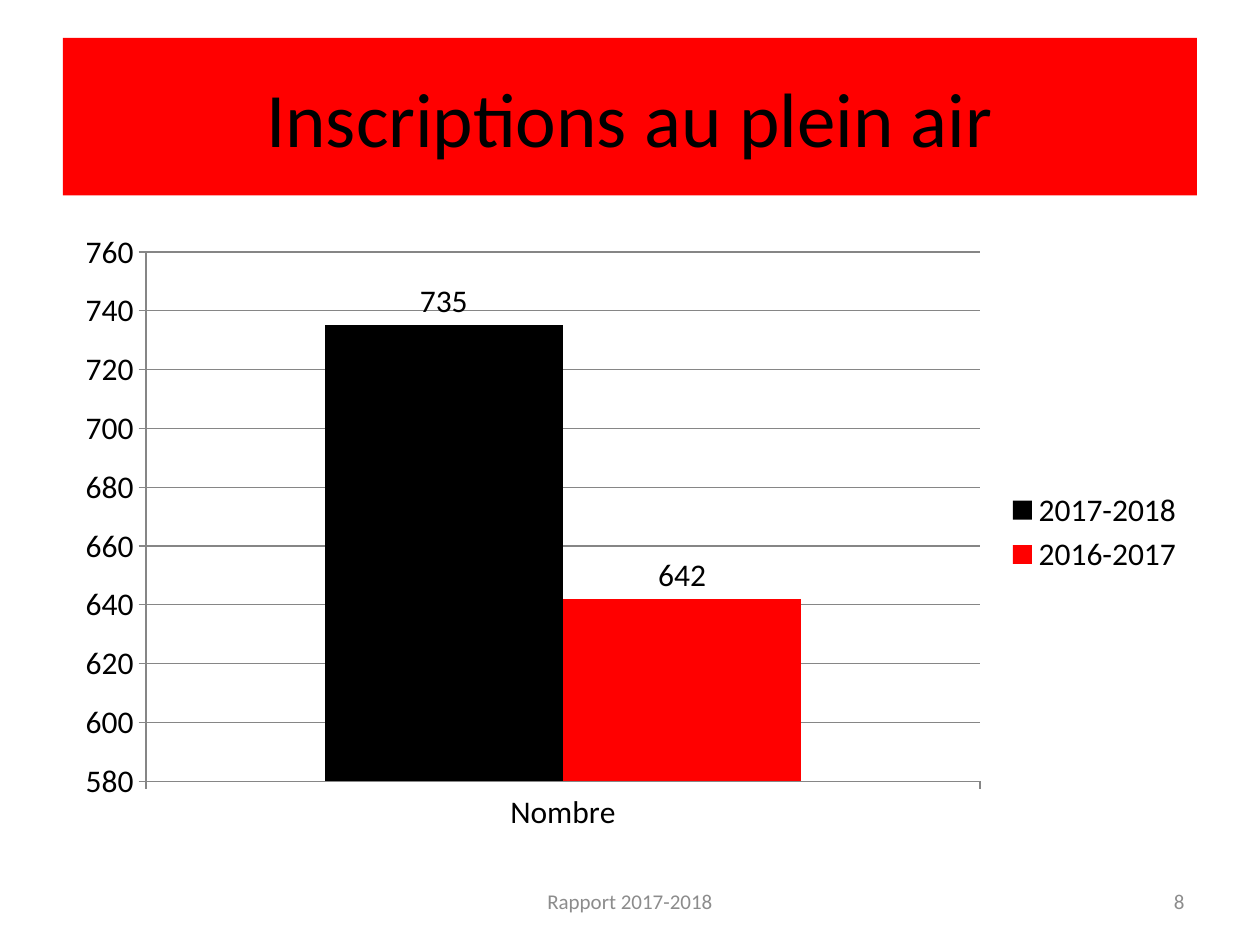
from dataclasses import dataclass
from pptx import Presentation
from pptx.chart.data import CategoryChartData as ChartData
from pptx.dml.color import RGBColor as RGB
from pptx.enum.chart import XL_CHART_TYPE as Kind, XL_LABEL_POSITION as Spot
from pptx.enum.chart import XL_LEGEND_POSITION as Side, XL_TICK_MARK as Tick
from pptx.enum.shapes import MSO_SHAPE as Shape
from pptx.enum.text import MSO_ANCHOR as Anchor, PP_ALIGN as Align
from pptx.util import Inches, Pt


@dataclass(frozen=True)
class Theme:
    font: str = "Calibri"
    black: RGB = RGB(0, 0, 0)
    red: RGB = RGB(255, 0, 0)
    gray: RGB = RGB(0x8C, 0x8C, 0x8C)
    line: RGB = RGB(0x86, 0x86, 0x86)
    head: int = 44
    body: int = 18
    foot: int = 12


theme = Theme()
WIDE, HIGH = 10, 7.5
EDGE = 0.05  # side margin, as a share of the width
FULL = 1 - 2 * EDGE


def area(left, top, wide, high):
    """Turn shares of the slide into a box of lengths."""
    return (Inches(left * WIDE), Inches(top * HIGH),
            Inches(wide * WIDE), Inches(high * HIGH))


def style(font, size, color):
    font.name = theme.font
    font.size = Pt(size)
    font.color.rgb = color


def write(shape, text, size, color, align):
    frame = shape.text_frame
    frame.word_wrap = True
    frame.vertical_anchor = Anchor.MIDDLE
    frame.text = text
    para = frame.paragraphs[0]
    para.alignment = align
    style(para.runs[0].font, size, color)


def add_title(slide, box, text):
    band = slide.shapes.add_shape(Shape.RECTANGLE, *box)
    band.shadow.inherit = False
    band.fill.solid()
    band.fill.fore_color.rgb = theme.red
    band.line.fill.background()
    write(band, text, theme.head, theme.black, Align.CENTER)


def add_bars(slide, box, cats, rows):
    data = ChartData()
    data.categories = cats
    for name, vals, _ in rows:
        data.add_series(name, vals)
    chart = slide.shapes.add_chart(Kind.COLUMN_CLUSTERED, *box, data).chart
    style(chart.font, theme.body, theme.black)
    chart.has_title = False

    # Legend
    chart.has_legend = True
    chart.legend.position = Side.RIGHT
    chart.legend.include_in_layout = False

    # Axes and grid
    grid = chart.value_axis
    grid.minimum_scale, grid.maximum_scale, grid.major_unit = 580, 760, 20
    grid.has_major_gridlines = True
    for axis in (chart.category_axis, grid):
        axis.major_tick_mark = Tick.OUTSIDE
        axis.format.line.color.rgb = theme.line
    grid.major_gridlines.format.line.color.rgb = theme.line

    # Bars and their values
    plot = chart.plots[0]
    plot.gap_width = 150
    plot.overlap = 0
    plot.vary_by_categories = False
    for bar, (_, _, color) in zip(plot.series, rows):
        bar.format.fill.solid()
        bar.format.fill.fore_color.rgb = color
        bar.invert_if_negative = False
        tags = bar.data_labels
        tags.show_value = True
        tags.position = Spot.OUTSIDE_END
        style(tags.font, theme.body, theme.black)


def add_note(slide, box, text, align):
    note = slide.shapes.add_textbox(*box)
    write(note, text, theme.foot, theme.gray, align)


def main():
    deck = Presentation()
    deck.slide_width, deck.slide_height = Inches(WIDE), Inches(HIGH)
    slide = deck.slides.add_slide(deck.slide_layouts[6])

    add_title(slide, area(EDGE, 0.04, FULL, 1 / 6), "Inscriptions au plein air")
    add_bars(slide, area(EDGE, 7 / 30, FULL, 0.66), ["Nombre"], [
        ("2017-2018", [735], theme.black),
        ("2016-2017", [642], theme.red),
    ])

    # Footer: centred text and page number
    foot, high = 0.927, 0.053
    mid, num = 0.317, 0.233
    add_note(slide, area((1 - mid) / 2, foot, mid, high),
             "Rapport 2017-2018", Align.CENTER)
    add_note(slide, area(1 - EDGE - num, foot, num, high), "8", Align.RIGHT)

    deck.save("out.pptx")


if __name__ == "__main__":
    main()
